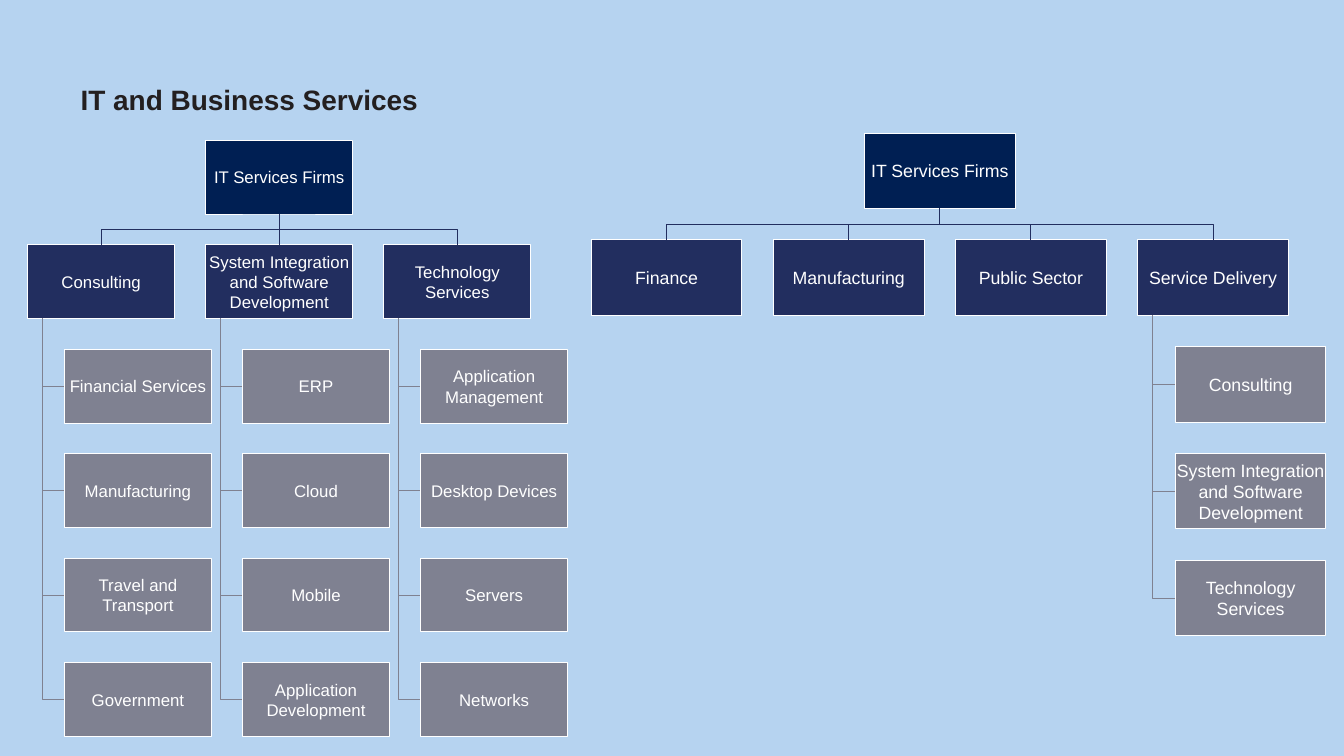
from lxml import etree
from pptx import Presentation
from pptx import util as u
from pptx.dml.color import RGBColor
from pptx.enum import shapes, text
from pptx.oxml import ns

NAVY, INDIGO, GREY, WHITE = "001F53", "222E5F", "7F8191", "FFFFFF"
BACKGROUND, INK = "B6D3F0", "231F20"

BOX_TEXT = {
    "word_wrap": True,
    "vertical_anchor": text.MSO_ANCHOR.MIDDLE,
    "margin_left": u.Inches(0.01),
    "margin_right": u.Inches(0.01),
    "margin_top": u.Inches(0.01),
    "margin_bottom": u.Inches(0.01),
}
TITLE_TEXT = {"word_wrap": True, "vertical_anchor": text.MSO_ANCHOR.BOTTOM}

IT_SERVICES = [
    ("Consulting", ["Financial Services", "Manufacturing", "Travel and Transport", "Government"]),
    ("System Integration and Software Development", ["ERP", "Cloud", "Mobile", "Application Development"]),
    ("Technology Services", ["Application Management", "Desktop Devices", "Servers", "Networks"]),
]
SECTORS = [
    ("Finance", []),
    ("Manufacturing", []),
    ("Public Sector", []),
    ("Service Delivery", [
        "Consulting",
        "System Integration and Software Development",
        "Technology Services",
    ]),
]


def color(value):
    return RGBColor.from_string(value)


def apply(target, values):
    for name, value in values.items():
        setattr(target, name, value)


class OrgSlide:
    font = "Arial"
    line_width = u.Pt(1)

    def __init__(self, deck):
        self.slide = deck.slides.add_slide(deck.slide_layouts[6])
        fill = self.slide.background.fill
        fill.solid()
        fill.fore_color.rgb = color(BACKGROUND)

    def stroke(self, line, line_color):
        line.color.rgb = color(line_color)
        line.width = self.line_width

    def label(self, frame, words, frame_format, paragraph_format, font_format, font_color):
        apply(frame, frame_format)
        paragraph = frame.paragraphs[0]
        apply(paragraph, paragraph_format)
        run = paragraph.add_run()
        run.text = words
        apply(run.font, {"name": self.font, **font_format})
        run.font.color.rgb = color(font_color)

    def title(self, words, left, top, width, height):
        box = self.slide.shapes.add_textbox(*map(u.Inches, (left, top, width, height)))
        self.label(box.text_frame, words, TITLE_TEXT, {"line_spacing": 0.9},
                   {"size": u.Pt(30), "bold": True}, INK)

    def box(self, words, left, top, width, fill_color, size):
        node = self.slide.shapes.add_shape(
            shapes.MSO_SHAPE.RECTANGLE, *map(u.Inches, (left, top, width, width / 2)))
        node.shadow.inherit = False
        node.fill.solid()
        node.fill.fore_color.rgb = color(fill_color)
        self.stroke(node.line, WHITE)
        self.label(node.text_frame, words, BOX_TEXT, {"alignment": text.PP_ALIGN.CENTER},
                   {"size": u.Pt(size)}, WHITE)
        return node

    def bent_link(self, points, line_color):
        start, *rest = [tuple(map(u.Inches, point)) for point in points]
        builder = self.slide.shapes.build_freeform(*start)
        builder.add_line_segments(rest, close=False)
        link = builder.convert_to_shape()
        link.shadow.inherit = False
        link.fill.background()
        self.stroke(link.line, line_color)

    def straight_link(self, parent, child, line_color):
        link = self.slide.shapes.add_connector(shapes.MSO_CONNECTOR.STRAIGHT, 0, 0, 0, 0)
        link.begin_connect(parent, 2)
        link.end_connect(child, 0)
        self.stroke(link.line, line_color)
        etree.SubElement(link._element.spPr, ns.qn("a:effectLst"))

    def tree(self, root_name, branches, left, top, width, size):
        height, column_step, row_step = width / 2, width * 1.21, width * 0.71
        root_left = left + column_step * (len(branches) - 1) / 2
        root_middle, root_bottom = root_left + width / 2, top + height
        branch_top = top + row_step
        root = self.box(root_name, root_left, top, width, NAVY, size)

        for column, (branch_name, leaves) in enumerate(branches):
            branch_left = left + column * column_step
            branch_middle = branch_left + width / 2
            branch = self.box(branch_name, branch_left, branch_top, width, INDIGO, size)
            if abs(branch_middle - root_middle) < 0.01:
                self.straight_link(root, branch, INDIGO)
            else:
                bend = (root_bottom + branch_top) / 2
                self.bent_link([(root_middle, root_bottom), (root_middle, bend),
                                (branch_middle, bend), (branch_middle, branch_top)], INDIGO)

            trunk, leaf_left = branch_left + width * 0.1, branch_left + width * 0.25
            for row, leaf_name in enumerate(leaves, 1):
                leaf_top = branch_top + row * row_step
                leaf_middle = leaf_top + height / 2
                self.bent_link([(trunk, branch_top + height), (trunk, leaf_middle),
                                (leaf_left, leaf_middle)], GREY)
                self.box(leaf_name, leaf_left, leaf_top, width, GREY, size)


def main():
    deck = Presentation()
    deck.slide_width, deck.slide_height = u.Inches(20), u.Inches(11.25)
    page = OrgSlide(deck)
    page.title("IT and Business Services", 1.1, 1.17, 17.81, 0.62)
    page.tree("IT Services Firms", SECTORS, 8.8, 1.98, 2.24, 19)
    page.tree("IT Services Firms", IT_SERVICES, 0.41, 2.09, 2.19, 18)
    deck.save("out.pptx")


if __name__ == "__main__":
    main()
